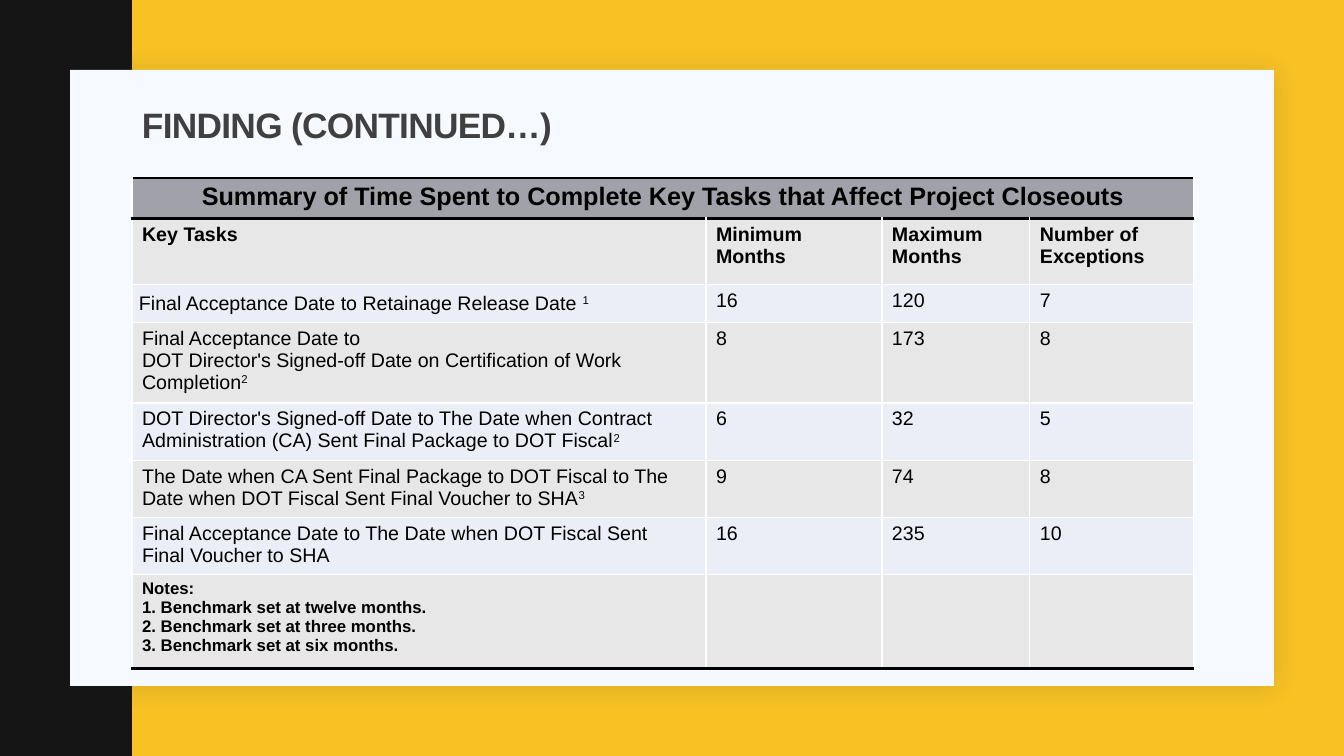
"""Build the slide that sums up the time spent on project closeout tasks."""
from dataclasses import dataclass

from lxml.etree import SubElement
from pptx import Presentation
from pptx.dml.color import RGBColor
from pptx.enum.shapes import MSO_SHAPE
from pptx.enum.text import MSO_ANCHOR, PP_ALIGN
from pptx.oxml import parse_xml
from pptx.oxml.ns import nsdecls, qn
from pptx.shapes.autoshape import Shape
from pptx.slide import Slide
from pptx.table import Table, _Cell as Cell
from pptx.text.text import _Paragraph as Paragraph
from pptx.util import Emu, Pt

EMU_PER_PX = 914400 / 100.8
FONT = "Arial"
COLORS = {
    "background": "F9C224",
    "band": "141514",
    "panel": "F6F9FF",
    "shadow": "1F2125",
    "title": "404040",
    "text": "000000",
    "rule": "000000",
    "heading": "A1A2A9",
    "gray_row": "E7E7E7",
    "blue_row": "ECEEF7",
}
COLUMN_WIDTHS = (574, 176, 148, 164)
ROW_HEIGHTS = (38, 66, 38, 76, 55, 54, 54, 94)


@dataclass(frozen=True)
class Box:
    left: int
    top: int
    width: int
    height: int

    def emu(self) -> tuple[Emu, Emu, Emu, Emu]:
        return px(self.left), px(self.top), px(self.width), px(self.height)


@dataclass(frozen=True)
class Task:
    lines: tuple[str, ...]
    note: str
    months_and_exceptions: tuple[str, str, str]


TITLE = "FINDING (CONTINUED…)"
TABLE_TITLE = "Summary of Time Spent to Complete Key Tasks that Affect Project Closeouts"
HEADERS = ("Key Tasks", "Minimum Months", "Maximum Months", "Number of Exceptions")
TASKS = (
    Task(("Final Acceptance Date to Retainage Release Date ",), "1", ("16", "120", "7")),
    Task(
        (
            "Final Acceptance Date to",
            "DOT Director's Signed-off Date on Certification of Work Completion",
        ),
        "2",
        ("8", "173", "8"),
    ),
    Task(
        (
            "DOT Director's Signed-off Date to The Date when Contract "
            "Administration (CA) Sent Final Package to DOT Fiscal",
        ),
        "2",
        ("6", "32", "5"),
    ),
    Task(
        (
            "The Date when CA Sent Final Package to DOT Fiscal to The "
            "Date when DOT Fiscal Sent Final Voucher to SHA",
        ),
        "3",
        ("9", "74", "8"),
    ),
    Task(
        ("Final Acceptance Date to The Date when DOT Fiscal Sent Final Voucher to SHA",),
        "",
        ("16", "235", "10"),
    ),
)
NOTES = (
    "Notes:",
    "1. Benchmark set at twelve months.",
    "2. Benchmark set at three months.",
    "3. Benchmark set at six months.",
)


def px(length: int) -> Emu:
    return Emu(round(length * EMU_PER_PX))


def color(name: str) -> RGBColor:
    return RGBColor.from_string(COLORS[name])


def style(paragraph: Paragraph, size: float, bold: bool, color_name: str = "text") -> None:
    font = paragraph.font
    font.name, font.size, font.bold = FONT, Pt(size), bold
    font.color.rgb = color(color_name)


def add_rectangle(slide: Slide, box: Box, color_name: str) -> Shape:
    shape = slide.shapes.add_shape(MSO_SHAPE.RECTANGLE, *box.emu())
    shape.shadow.inherit = False
    shape.fill.solid()
    shape.fill.fore_color.rgb = color(color_name)
    shape.line.fill.background()
    return shape


def add_soft_shadow(shape: Shape) -> None:
    effects = shape._element.spPr.find(qn("a:effectLst"))
    effects.append(parse_xml(
        f'<a:outerShdw {nsdecls("a")} blurRad="{Pt(20)}" dist="{Pt(2)}" dir="2700000" '
        f'algn="tl" rotWithShape="0"><a:srgbClr val="{COLORS["shadow"]}">'
        '<a:alpha val="15000"/></a:srgbClr></a:outerShdw>'
    ))


def add_title(slide: Slide, box: Box) -> None:
    frame = slide.shapes.add_textbox(*box.emu()).text_frame
    frame.word_wrap = True
    frame.vertical_anchor = MSO_ANCHOR.MIDDLE
    paragraph = frame.paragraphs[0]
    paragraph.line_spacing = 0.9
    run = paragraph.add_run()
    run.text = TITLE
    run._r.get_or_add_rPr().set("spc", "-50")
    style(paragraph, 25.2, True, "title")


def write_cell(cell: Cell, lines: tuple[str, ...], size: float, bold: bool, note: str = "") -> None:
    frame = cell.text_frame
    frame.text = "\n".join(lines)
    if note:
        run = frame.paragraphs[-1].add_run()
        run.text = note
        run._r.get_or_add_rPr().set("baseline", "30000")
    for paragraph in frame.paragraphs:
        style(paragraph, size, bold)


def paint_row(table: Table, row: int, color_name: str, rules: tuple[str, ...] = ()) -> None:
    for cell in table.rows[row].cells:
        cell.fill.solid()
        cell.fill.fore_color.rgb = color(color_name)
        properties = cell._tc.get_or_add_tcPr()
        for position, edge in enumerate(rules):
            line = SubElement(properties, qn(f"a:{edge}"), w=str(Pt(2)))
            fill = SubElement(line, qn("a:solidFill"))
            SubElement(fill, qn("a:srgbClr"), val=COLORS["rule"])
            properties.insert(position, line)


def add_summary_table(slide: Slide, left: int, top: int) -> None:
    box = Box(left, top, sum(COLUMN_WIDTHS), sum(ROW_HEIGHTS))
    table = slide.shapes.add_table(len(ROW_HEIGHTS), len(COLUMN_WIDTHS), *box.emu()).table
    table.first_row = table.horz_banding = False
    for column, width in zip(table.columns, COLUMN_WIDTHS):
        column.width = px(width)
    for row, height in zip(table.rows, ROW_HEIGHTS):
        row.height = px(height)

    last = len(ROW_HEIGHTS) - 1
    paint_row(table, 0, "heading", ("lnT", "lnB"))
    for row in range(1, last):
        paint_row(table, row, "gray_row" if row % 2 else "blue_row")
    paint_row(table, last, "gray_row", ("lnB",))

    heading = table.cell(0, 0)
    heading.merge(table.cell(0, len(COLUMN_WIDTHS) - 1))
    write_cell(heading, (TABLE_TITLE,), 18, True)
    heading.text_frame.paragraphs[0].alignment = PP_ALIGN.CENTER
    for column, header in enumerate(HEADERS):
        write_cell(table.cell(1, column), (header,), 14, True)
    for row, task in enumerate(TASKS, start=2):
        write_cell(table.cell(row, 0), task.lines, 14, False, task.note)
        for column, value in enumerate(task.months_and_exceptions, start=1):
            write_cell(table.cell(row, column), (value,), 14, False)
    write_cell(table.cell(last, 0), NOTES, 12, True)

    retainage = table.cell(2, 0)
    retainage.vertical_anchor = MSO_ANCHOR.MIDDLE
    retainage.margin_left = retainage.margin_right = px(7)
    retainage.margin_top = retainage.margin_bottom = 0
    retainage.text_frame.paragraphs[0].line_spacing = 1.05


def main() -> None:
    presentation = Presentation()
    presentation.slide_width, presentation.slide_height = px(1344), px(756)
    slide = presentation.slides.add_slide(presentation.slide_layouts[6])
    slide.background.fill.solid()
    slide.background.fill.fore_color.rgb = color("background")
    add_rectangle(slide, Box(0, 0, 132, 756), "band")
    add_soft_shadow(add_rectangle(slide, Box(70, 70, 1204, 616), "panel"))
    add_title(slide, Box(132, 104, 1092, 47))
    add_summary_table(slide, 132, 178)
    presentation.save("out.pptx")


if __name__ == "__main__":
    main()
